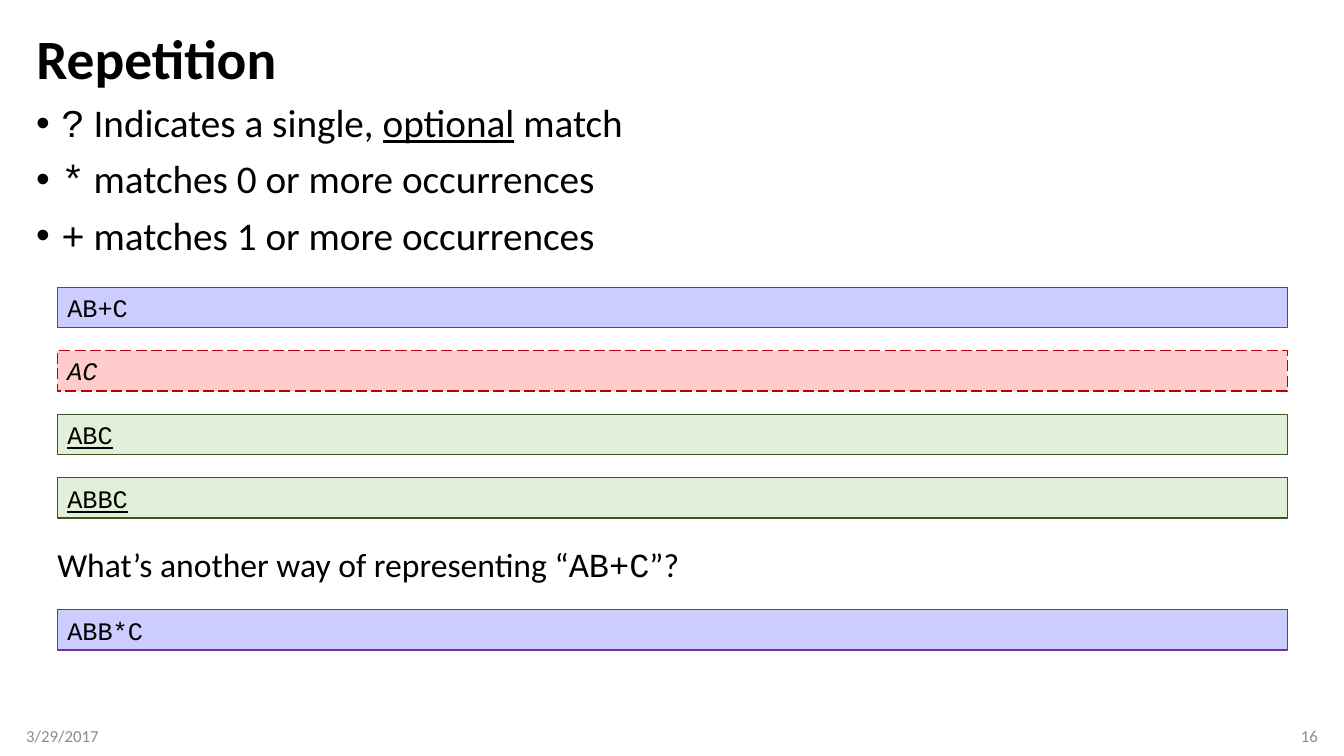
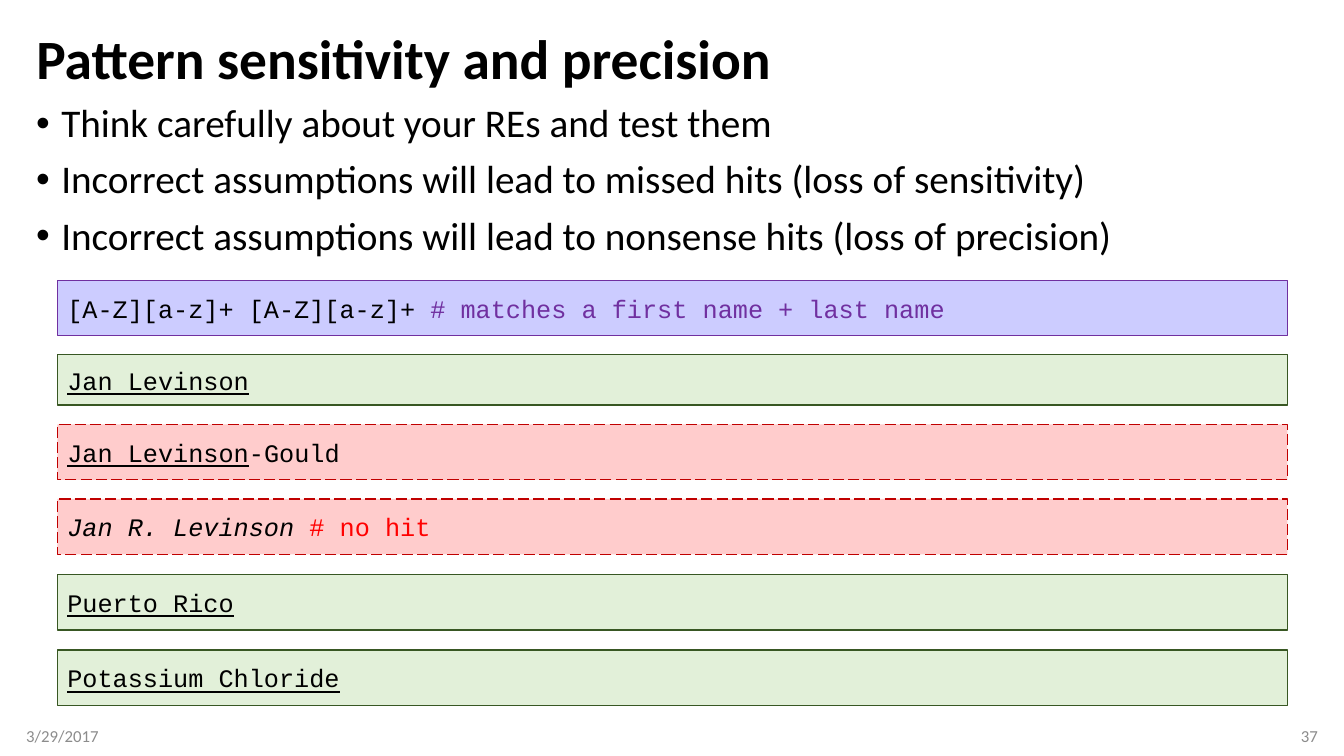
"""Build two slides on repetition and precision in regular expressions."""

from dataclasses import dataclass, field
from typing import Any

from lxml.etree import SubElement
from pptx import Presentation
from pptx.dml.color import RGBColor
from pptx.enum.dml import MSO_LINE
from pptx.enum.shapes import MSO_SHAPE
from pptx.enum.text import MSO_ANCHOR, MSO_AUTO_SIZE, PP_ALIGN
from pptx.oxml.ns import qn
from pptx.util import Inches, Pt

COLORS = {
    "text": "000000",
    "footer": "8C8C8C",
    "pattern_fill": "CCCCFF",
    "pattern_line": "7030A0",
    "miss_fill": "FFCCCC",
    "miss_line": "C00000",
    "hit_fill": "E2F0D9",
    "hit_line": "385723",
    "warning": "FF0000",
}
SANS, MONO = "Calibri", "Courier New"

TITLE = {"name": SANS, "size": Pt(39.6), "bold": True}
BULLET = {"name": SANS, "size": Pt(28)}
QUESTION = {"name": SANS, "size": Pt(24)}
FOOTER = {"name": SANS, "size": Pt(12)}
CODE = {"name": MONO, "size": Pt(18)}

MARGIN, CONTENT_WIDTH = 0.26, 12.81
BAND_LEFT, BAND_WIDTH = 0.57, 12.2
FOOTER_TOP, FOOTER_WIDTH, FOOTER_HEIGHT = 7.1, 3, 0.4
DATE = "3/29/2017"


@dataclass(frozen=True)
class Span:
    text: str
    style: dict[str, Any] = field(default_factory=dict)
    color: str = "text"


@dataclass(frozen=True)
class Band:
    kind: str
    spans: list[Span]
    height: float


@dataclass(frozen=True)
class Stack:
    top: float
    gap: float
    bands: list[Band]


@dataclass(frozen=True)
class Page:
    title: str
    number: int
    bullets: list[list[Span]]
    stacks: list[Stack]


def mono(text: str) -> Span:
    return Span(text, {"name": MONO})


def underlined(text: str) -> Span:
    return Span(text, {"underline": True})


def italic(text: str) -> Span:
    return Span(text, {"italic": True})


def rgb(name: str) -> RGBColor:
    return RGBColor.from_string(COLORS[name])


def write(para, spans: list[Span], base: dict[str, Any]) -> None:
    for span in spans:
        run = para.add_run()
        run.text = span.text
        for name, value in (base | span.style).items():
            setattr(run.font, name, value)
        run.font.color.rgb = rgb(span.color)


def add_box(slide, left: float, top: float, width: float, height: float, **frame_format):
    box = slide.shapes.add_textbox(Inches(left), Inches(top), Inches(width), Inches(height))
    for name, value in ({"word_wrap": True} | frame_format).items():
        setattr(box.text_frame, name, value)
    return box.text_frame


def add_title(slide, text: str) -> None:
    title = slide.shapes.title
    place = {"left": MARGIN, "top": 0.25, "width": CONTENT_WIDTH, "height": 0.72}
    for name, value in place.items():
        setattr(title, name, Inches(value))
    frame = title.text_frame
    frame.vertical_anchor = MSO_ANCHOR.MIDDLE
    frame.auto_size = MSO_AUTO_SIZE.NONE
    para = frame.paragraphs[0]
    para.alignment = PP_ALIGN.LEFT
    para.line_spacing = 0.9
    write(para, [Span(text)], TITLE)


def add_bullets(slide, bullets: list[list[Span]]) -> None:
    frame = add_box(slide, MARGIN, 0.98, CONTENT_WIDTH, 1.75)
    for index, spans in enumerate(bullets):
        para = frame.add_paragraph() if index else frame.paragraphs[0]
        para.line_spacing = 0.9
        para.space_before = Pt(10)
        properties = para._p.get_or_add_pPr()
        properties.set("marL", str(Inches(0.25)))
        properties.set("indent", str(Inches(-0.25)))
        SubElement(properties, qn("a:buFont"), typeface="Arial")
        SubElement(properties, qn("a:buChar"), char="•")
        write(para, spans, BULLET)


def add_footer(slide, number: int) -> None:
    right_column = MARGIN + CONTENT_WIDTH - FOOTER_WIDTH
    for text, left, alignment, flush_side in (
        (DATE, MARGIN, PP_ALIGN.LEFT, "margin_left"),
        (str(number), right_column, PP_ALIGN.RIGHT, "margin_right"),
    ):
        frame = add_box(
            slide, left, FOOTER_TOP, FOOTER_WIDTH, FOOTER_HEIGHT,
            vertical_anchor=MSO_ANCHOR.MIDDLE, **{flush_side: 0},
        )
        frame.paragraphs[0].alignment = alignment
        write(frame.paragraphs[0], [Span(text, color="footer")], FOOTER)


def add_band(slide, band: Band, top: float) -> None:
    shape = slide.shapes.add_shape(
        MSO_SHAPE.RECTANGLE,
        Inches(BAND_LEFT), Inches(top), Inches(BAND_WIDTH), Inches(band.height),
    )
    shape.shadow.inherit = False
    shape.fill.solid()
    shape.fill.fore_color.rgb = rgb(f"{band.kind}_fill")
    shape.line.color.rgb = rgb(f"{band.kind}_line")
    shape.line.width = Pt(1)
    if band.kind == "miss":
        shape.line.dash_style = MSO_LINE.LONG_DASH
    shape.text_frame.vertical_anchor = MSO_ANCHOR.MIDDLE
    para = shape.text_frame.paragraphs[0]
    para.alignment = PP_ALIGN.LEFT
    write(para, band.spans, CODE)


def add_stack(slide, stack: Stack) -> None:
    top = stack.top
    for band in stack.bands:
        add_band(slide, band, top)
        top += band.height + stack.gap


def add_question(slide, spans: list[Span]) -> None:
    frame = add_box(slide, 0.47, 5.35, 7, 0.5)
    write(frame.paragraphs[0], spans, QUESTION)


def add_page(deck, page: Page):
    slide = deck.slides.add_slide(deck.slide_layouts.get_by_name("Title Only"))
    add_title(slide, page.title)
    add_bullets(slide, page.bullets)
    add_footer(slide, page.number)
    for stack in page.stacks:
        add_stack(slide, stack)
    return slide


REPETITION = Page(
    "Repetition",
    16,
    [
        [mono("?"), Span(" Indicates a single, "), underlined("optional"), Span(" match")],
        [mono("*"), Span(" matches 0 or more occurrences")],
        [mono("+"), Span(" matches 1 or more occurrences")],
    ],
    [
        Stack(2.85, 0.23, [
            Band("pattern", [Span("AB+C")], 0.4),
            Band("miss", [italic("AC")], 0.4),
            Band("hit", [underlined("ABC")], 0.4),
            Band("hit", [underlined("ABBC")], 0.4),
        ]),
        Stack(6.05, 0, [Band("pattern", [Span("ABB*C")], 0.4)]),
    ],
)
QUESTION_SPANS = [
    Span("What’s another way of representing “"),
    mono("AB+C"),
    Span("”?"),
]

PRECISION = Page(
    "Pattern sensitivity and precision",
    37,
    [
        [Span("Think carefully about your REs and test them")],
        [Span("Incorrect assumptions will lead to missed hits (loss of sensitivity)")],
        [Span("Incorrect assumptions will lead to nonsense hits (loss of precision)")],
    ],
    [
        Stack(2.78, 0.19, [
            Band("pattern", [
                Span("[A-Z][a-z]+ [A-Z][a-z]+ "),
                Span("# matches a first name + last name", color="pattern_line"),
            ], 0.55),
            Band("hit", [underlined("Jan Levinson")], 0.5),
            Band("miss", [underlined("Jan Levinson"), Span("-Gould")], 0.55),
            Band("miss", [italic("Jan R. Levinson "), Span("# no hit", color="warning")], 0.55),
        ]),
        Stack(5.7, 0.2, [
            Band("hit", [underlined("Puerto Rico")], 0.55),
            Band("hit", [underlined("Potassium Chloride")], 0.55),
        ]),
    ],
)


def main() -> None:
    deck = Presentation()
    deck.slide_width = Inches(13.33)
    deck.slide_height = Inches(7.5)
    add_question(add_page(deck, REPETITION), QUESTION_SPANS)
    add_page(deck, PRECISION)
    deck.save("out.pptx")


if __name__ == "__main__":
    main()
